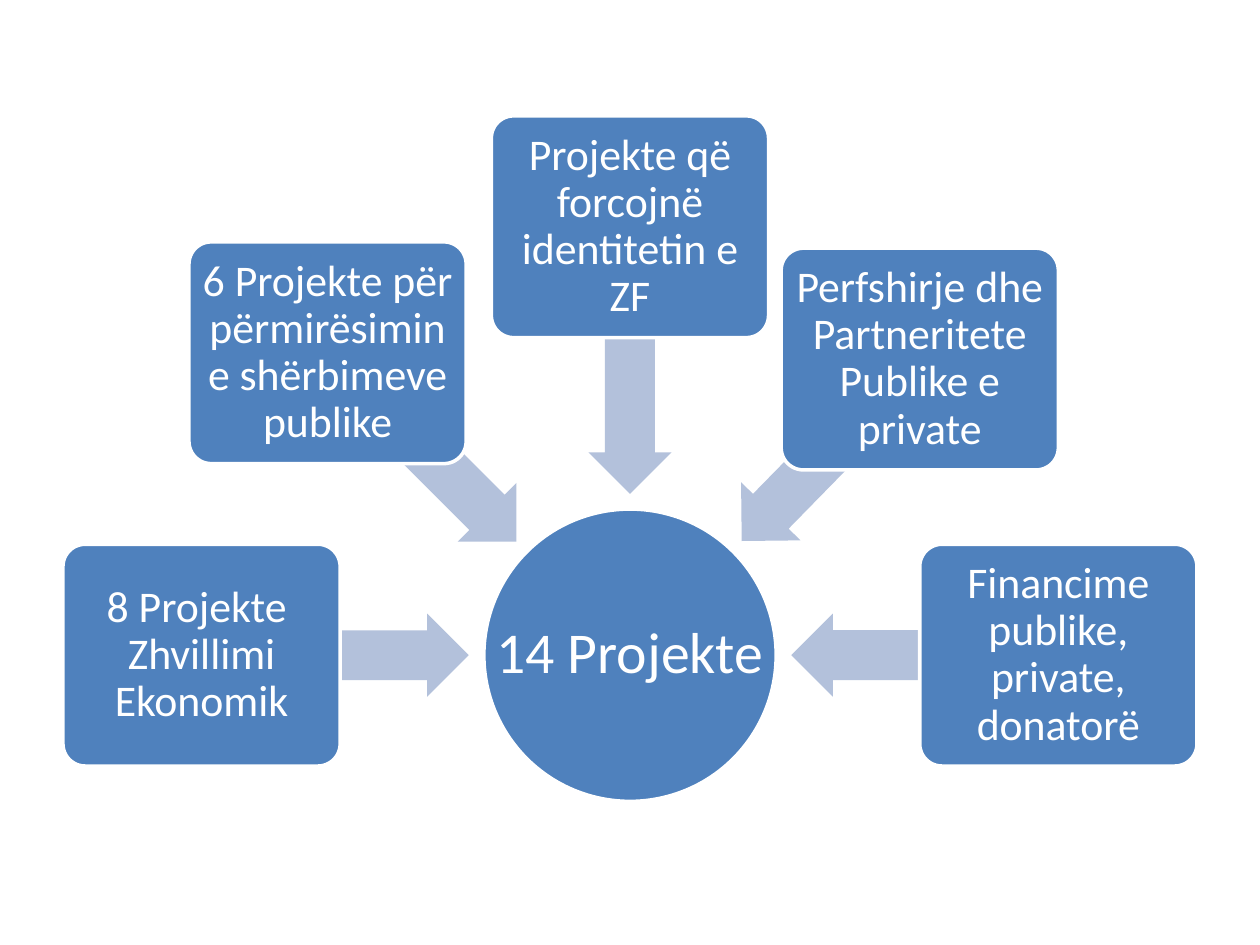
import math

from pptx import Presentation
from pptx.dml.color import RGBColor
from pptx.enum.shapes import MSO_SHAPE
from pptx.enum.text import MSO_ANCHOR, PP_ALIGN
from pptx.util import Inches, Pt

ELLIPSE = MSO_SHAPE.OVAL
ROUNDED = MSO_SHAPE.ROUNDED_RECTANGLE
LEFT_ARROW = MSO_SHAPE.LEFT_ARROW
MIDDLE = MSO_ANCHOR.MIDDLE
CENTER = PP_ALIGN.CENTER

HUB_X, HUB_Y, HUB_SIZE = 5, 5.2, 2.32
BOX_WIDTH, BOX_HEIGHT = 2.2, 1.76
ARROW_HEIGHT = 0.66

# Box centre x and y, arrow length, text
SOURCES = [
    (1.6, 5.2, 2.12, "8 Projekte  Zhvillimi Ekonomik"),
    (2.6, 2.8, 2.12, "6 Projekte për përmirësimin e shërbimeve publike"),
    (5, 1.8, 2.12, "Projekte që forcojnë identitetin e ZF"),
    (7.3, 2.85, 2.02, "Perfshirje dhe Partneritete Publike e private"),
    (8.4, 5.2, 2.12, "Financime publike, private, donatorë"),
]


def color(hex_value):
    return RGBColor.from_string(hex_value)


class RadialDiagram:
    font = "Calibri"
    node_fill = "4F81BD"
    arrow_fill = "B3C1DB"
    white = "FFFFFF"

    def __init__(self, slide):
        self.slide = slide

    def add_shape(self, kind, x, y, width, height, fill):
        """Add a filled shape centred on x, y."""
        shape = self.slide.shapes.add_shape(
            kind, Inches(x - width / 2), Inches(y - height / 2),
            Inches(width), Inches(height))
        shape.shadow.inherit = False
        shape.fill.solid()
        shape.fill.fore_color.rgb = color(fill)
        shape.line.fill.background()
        return shape

    def add_node(self, kind, x, y, width, height, text, size, wrap=True):
        shape = self.add_shape(kind, x, y, width, height, self.node_fill)
        shape.line.color.rgb = color(self.white)
        shape.line.width = Pt(2)
        frame = shape.text_frame
        frame.word_wrap = wrap
        frame.vertical_anchor = MIDDLE
        frame.margin_left = frame.margin_right = 0
        frame.margin_top = frame.margin_bottom = 0
        paragraph = frame.paragraphs[0]
        paragraph.text = text
        paragraph.alignment = CENTER
        paragraph.line_spacing = 0.9
        paragraph.font.name = self.font
        paragraph.font.size = Pt(size)
        paragraph.font.color.rgb = color(self.white)
        return shape

    def add_hub(self, text):
        self.add_node(ELLIPSE, HUB_X, HUB_Y, HUB_SIZE, HUB_SIZE, text, 33, wrap=False)

    def add_box(self, x, y, text):
        box = self.add_node(ROUNDED, x, y, BOX_WIDTH, BOX_HEIGHT, text, 25)
        box.adjustments[0] = 0.1

    def add_arrow(self, x, y, length):
        """Add an arrow that starts at x, y and points to the hub."""
        angle = math.atan2(HUB_Y - y, HUB_X - x)
        arrow = self.add_shape(
            LEFT_ARROW, x + length / 2 * math.cos(angle),
            y + length / 2 * math.sin(angle), length, ARROW_HEIGHT, self.arrow_fill)
        arrow.adjustments[0] = 0.6
        arrow.adjustments[1] = 0.5
        arrow.rotation = (math.degrees(angle) + 180) % 360


def main():
    presentation = Presentation()
    presentation.slide_width = Inches(10)
    presentation.slide_height = Inches(7.5)
    slide = presentation.slides.add_slide(presentation.slide_layouts[6])
    diagram = RadialDiagram(slide)
    diagram.add_hub("14 Projekte")
    for x, y, length, text in SOURCES:
        diagram.add_arrow(x, y, length)
        diagram.add_box(x, y, text)
    presentation.save("out.pptx")


if __name__ == "__main__":
    main()
